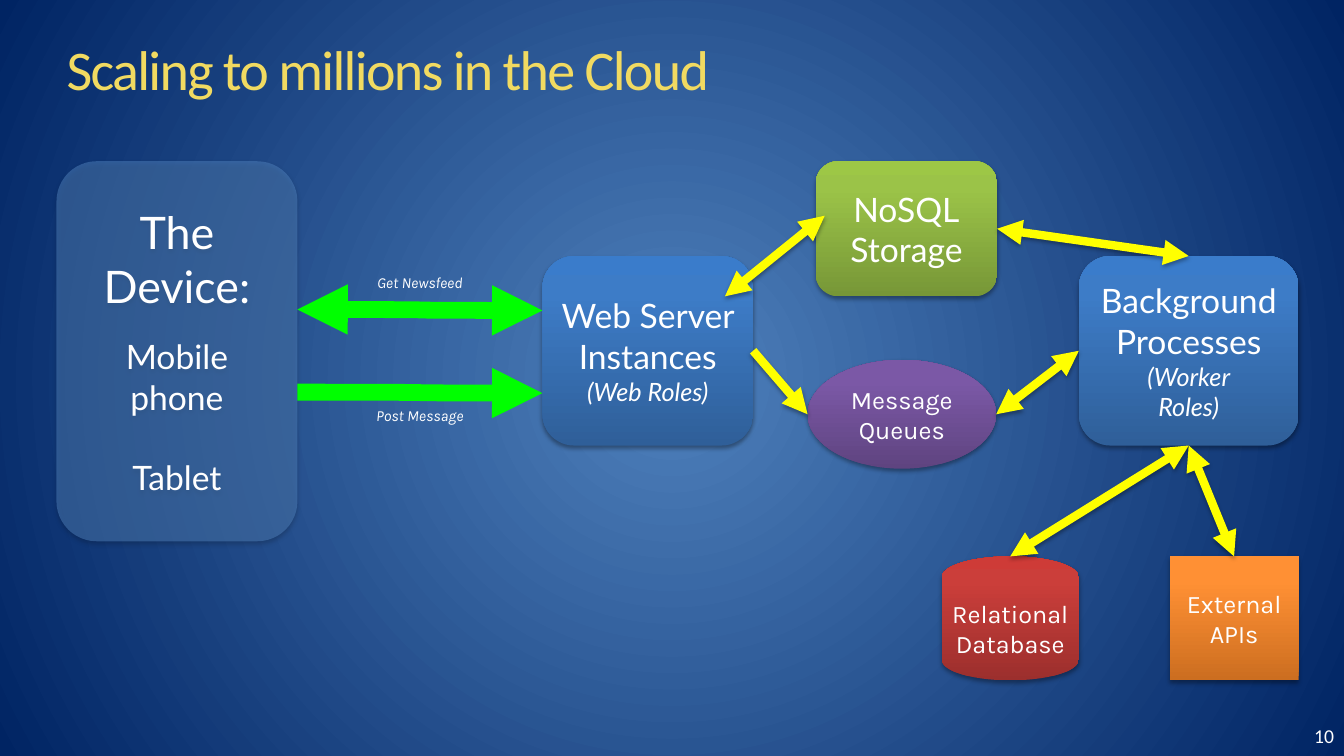
"""Build the slide on scaling to millions in the cloud."""
from lxml import etree
from pptx import Presentation
from pptx.dml.color import RGBColor
from pptx.enum.shapes import MSO_CONNECTOR, MSO_SHAPE
from pptx.enum.text import MSO_ANCHOR, MSO_AUTO_SIZE, PP_ALIGN
from pptx.oxml import parse_xml
from pptx.oxml.ns import nsdecls, qn
from pptx.util import Inches, Pt

ROUND, RECT = MSO_SHAPE.ROUNDED_RECTANGLE, MSO_SHAPE.RECTANGLE
OVAL, DISK = MSO_SHAPE.OVAL, MSO_SHAPE.FLOWCHART_MAGNETIC_DISK
LINE, CURVE = MSO_CONNECTOR.STRAIGHT, MSO_CONNECTOR.CURVE
LEFT, CENTER, RIGHT = PP_ALIGN.LEFT, PP_ALIGN.CENTER, PP_ALIGN.RIGHT
MIDDLE, FIXED = MSO_ANCHOR.MIDDLE, MSO_AUTO_SIZE.NONE
TOP, WEST, BOTTOM, EAST = range(4)

TITLE = "Scaling to millions in the Cloud"
BACK = [(0, "4F81BD"), (100, "002463")]
BLUE = [(0, "2F5F99"), (80, "3D7CC7"), (100, "3A7CCB")]
GREEN = [(0, "779737"), (80, "9BC348"), (100, "9DC746")]
PURPLE = [(0, "5F4480"), (80, "7B58A6"), (100, "7C57A8")]
RED = [(0, "9C2F2D"), (80, "CB3E3A"), (100, "CE3B37")]
ORANGE = [(0, "CC6E20"), (80, "FF9034"), (100, "FF9136")]

BIG = dict(size=24, font="Lato")
ROLE = dict(size=18, font="Lato", italic=True)
SMALL = dict(size=18, font="Karla")
NOTE = dict(size=11, font="Karla", italic=True)

NODES = {
    "web": (ROUND, (5.38, 2.54, 2.09, 1.88), BLUE,
            [("Web Server Instances", BIG), ("(Web Roles)", ROLE)]),
    "device": (ROUND, (0.56, 1.6, 2.39, 3.77), "4F81BD",
               [("The Device:", dict(size=32, font="Lato")),
                ("Mobile phone", dict(BIG, before=17)),
                ("Tablet", dict(BIG, before=29))]),
    "worker": (ROUND, (10.7, 2.54, 2.18, 1.88), BLUE,
               [("Background Processes", BIG), ("(Worker\nRoles)", ROLE)]),
    "store": (ROUND, (8.09, 1.6, 1.8, 1.34), GREEN,
              [("NoSQL", BIG), ("Storage", BIG)]),
    "queue": (OVAL, (8.01, 3.57, 1.87, 1.08), PURPLE,
              [("Message Queues", SMALL)]),
    "data": (DISK, (9.34, 5.52, 1.36, 1.23), RED,
             [("Relational Database", SMALL)]),
    "api": (RECT, (11.6, 5.52, 1.28, 1.23), ORANGE,
            [("External APIs", SMALL)]),
}
CALLS = [((2.95, 3.89), (5.38, 3.9), False), ((2.95, 3.07), (5.38, 3.08), True)]
LINKS = [
    (("web", EAST), ("queue", WEST), False),
    (("queue", EAST), ("worker", WEST), True),
    (("worker", BOTTOM), ("data", TOP), True),
    (("worker", BOTTOM), ("api", TOP), True),
    (("store", EAST), ("worker", TOP), True),
    ((7.19, 2.94), (8.18, 2.14), True),
]
LABELS = [("Post Message", (2.95, 3.95, 2.43, 0.35), CENTER, NOTE),
          ("Get Newsfeed", (2.95, 2.63, 2.43, 0.35), CENTER, NOTE),
          ("10", (12.79, 7.1, 0.54, 0.4), RIGHT, dict(size=14, font="Calibri"))]


def color(code):
    return RGBColor.from_string(code)


def write(frame, lines, align=CENTER):
    frame.word_wrap = True
    frame.auto_size = FIXED
    frame.vertical_anchor = MIDDLE
    for i, (words, look) in enumerate(lines):
        para = frame.paragraphs[0] if i == 0 else frame.add_paragraph()
        style(para, words, align=align, **look)


def style(para, words, size, font, align, ink="FFFFFF", italic=False, before=0):
    para.text = words
    para.alignment = align
    para.space_before = Pt(before)
    for run in para.runs:
        run.font.size = Pt(size)
        run.font.name = font
        run.font.italic = italic
        run.font.color.rgb = color(ink)


def blend(owner, stops, shade):
    marks = "".join(f'<a:gs pos="{pos * 1000}"><a:srgbClr val="{code}"/></a:gs>'
                    for pos, code in stops)
    old = owner.find(".//" + qn("a:gradFill"))
    old.getparent().replace(old, parse_xml(
        f'<a:gradFill {nsdecls("a")} rotWithShape="1">'
        f"<a:gsLst>{marks}</a:gsLst>{shade}</a:gradFill>"))


def cast(effect):
    effect.append(parse_xml(
        f'<a:outerShdw {nsdecls("a")} blurRad="40000" dist="23000" dir="5400000" '
        'rotWithShape="0"><a:srgbClr val="000000"><a:alpha val="35000"/>'
        "</a:srgbClr></a:outerShdw>"))


def node(slide, kind, box, paint, lines):
    shape = slide.shapes.add_shape(kind, *map(Inches, box))
    if isinstance(paint, str):
        shape.fill.solid()
        shape.fill.fore_color.rgb = color(paint)
        tint = shape.element.spPr.find(".//" + qn("a:srgbClr"))
        etree.SubElement(tint, qn("a:alpha")).set("val", "50000")
    else:
        shape.fill.gradient()
        blend(shape.element, paint, '<a:lin ang="16200000" scaled="0"/>')
    shape.line.fill.background()
    shape.shadow.inherit = False
    cast(shape.element.spPr.find(qn("a:effectLst")))
    write(shape.text_frame, lines)
    return shape


def place(end):
    if not isinstance(end[0], str):
        return end
    name, side = end
    x, y, w, h = NODES[name][1]
    return [(x + w / 2, y), (x, y + h / 2), (x + w / 2, y + h), (x + w, y + h / 2)][side]


def arrow(slide, kind, start, stop, both, ink, width):
    ends = [Inches(v) for v in (*place(start), *place(stop))]
    link = slide.shapes.add_connector(kind, *ends)
    link.line.color.rgb = color(ink)
    link.line.width = Pt(width)
    pen = link.line._get_or_add_ln()
    for tag in ("a:headEnd", "a:tailEnd")[not both:]:
        etree.SubElement(pen, qn(tag)).set("type", "triangle")
    return link, etree.SubElement(link.element.spPr, qn("a:effectLst"))


def main():
    deck = Presentation()
    deck.slide_width, deck.slide_height = Inches(13.33), Inches(7.5)
    slide = deck.slides.add_slide(deck.slide_layouts[5])
    slide.background.fill.gradient()
    blend(slide.element, BACK, '<a:path path="circle"><a:fillToRect l="50000" '
          't="50000" r="50000" b="50000"/></a:path>')

    title = slide.shapes.title
    title.left, title.top, title.width, title.height = map(
        Inches, (0.56, 0.26, 12.32, 0.83))
    write(title.text_frame,
          [(TITLE, dict(size=40, font="Calibri", ink="F1DA61"))], LEFT)
    title.text_frame.paragraphs[0].runs[0].font._element.set("spc", "-120")

    shapes = {name: node(slide, *parts) for name, parts in NODES.items()}
    for call in CALLS:
        arrow(slide, CURVE, *call, "00FF00", 12)
    for start, stop, both in LINKS:
        link, effect = arrow(slide, LINE, start, stop, both, "FFFF00", 6)
        cast(effect)
        for end, join in ((start, link.begin_connect), (stop, link.end_connect)):
            if end[0] in shapes and NODES[end[0]][0] in (ROUND, RECT):
                join(shapes[end[0]], end[1])
    for words, box, align, look in LABELS:
        label = slide.shapes.add_textbox(*map(Inches, box))
        write(label.text_frame, [(words, look)], align)
    deck.save("out.pptx")


if __name__ == "__main__":
    main()
